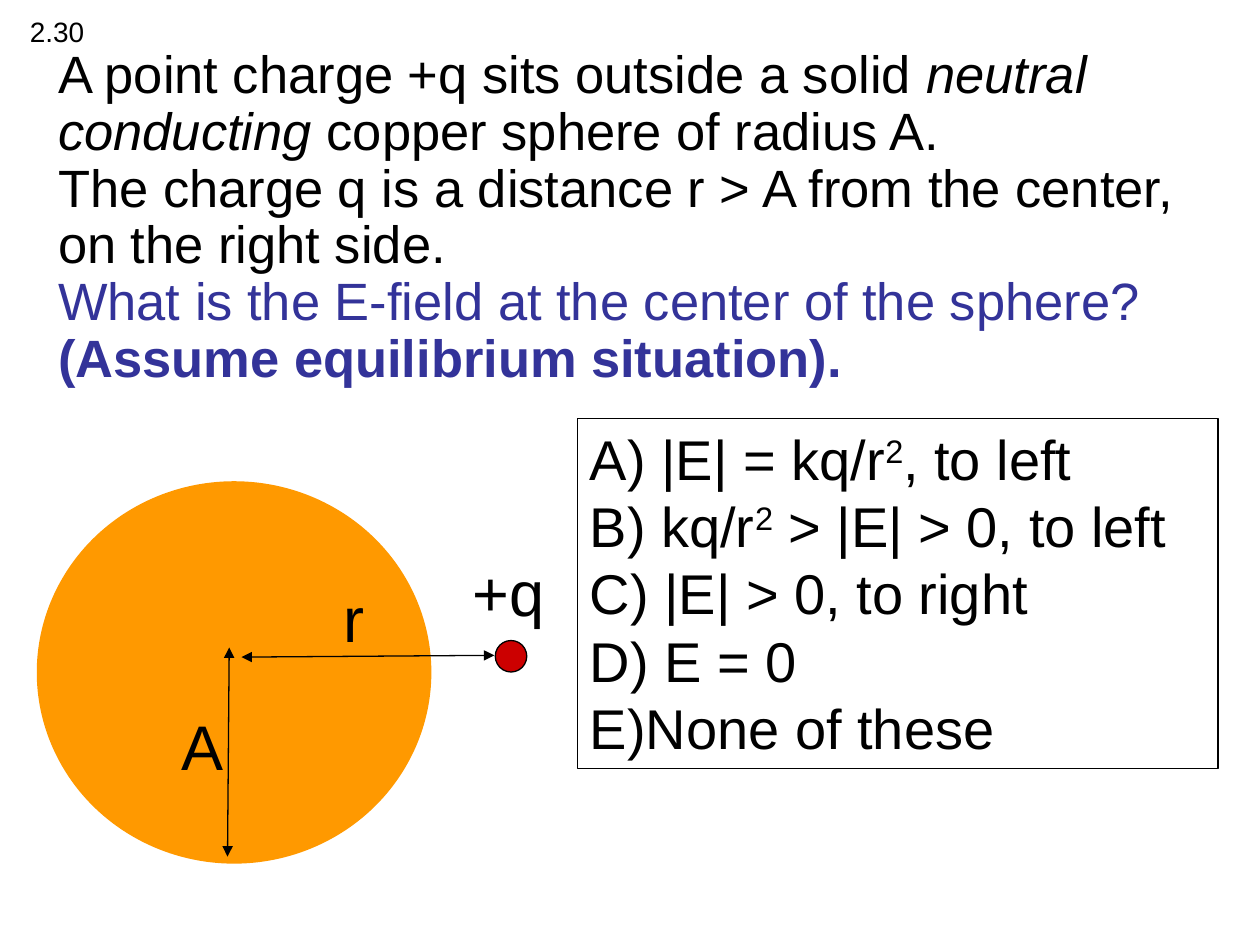
from dataclasses import dataclass

from lxml.etree import SubElement
from pptx import Presentation
from pptx.dml.color import RGBColor as Color
from pptx.enum.shapes import MSO_CONNECTOR as Connector, MSO_SHAPE as Shape
from pptx.enum.text import MSO_ANCHOR as Anchor, MSO_AUTO_SIZE as AutoSize, PP_ALIGN as Align
from pptx.oxml.ns import qn
from pptx.util import Pt


@dataclass(frozen=True)
class Theme:
    """Fonts, colours and type sizes of the slide."""
    font: str = "Arial"
    ink: str = "000000"
    question: str = "333399"
    copper: str = "FF9900"
    charge: str = "CC0000"
    body_size: int = 30
    answer_size: int = 32
    label_size: int = 36
    number_size: int = 16
    thin: float = 0.75
    thick: float = 6


THEME = Theme()

PROBLEM = [
    [("A point charge +q sits outside a solid ", ""), ("neutral conducting ", "italic"),
     ("copper sphere of radius A. ", ""), ("", "break"),
     ("The charge q is a distance r > A from the center, on the right side.", "")],
    [("What is the E-field at the center of the sphere?", "question")],
    [("(Assume equilibrium situation).", "question bold")],
]

ANSWERS = [
    [("A) |E| = kq/r", ""), ("2", "super"), (", to left", "")],
    [("B) kq/r", ""), ("2", "super"), (" > |E| > 0, to left", "")],
    [("C) |E| > 0, to right", "")],
    [("D) E = 0", "")],
    [("E)None of these", "")],
]


class SlideBuilder:
    """Draws styled elements on one slide, with lengths in points."""

    def __init__(self, slide, theme):
        """Keep the slide and its theme."""
        self.slide = slide
        self.theme = theme

    def place(self, shape, box):
        """Move and size a shape to left, top, width, height."""
        shape.left, shape.top, shape.width, shape.height = map(Pt, box)

    def outline(self, line, color, width):
        """Set the colour and width of a line."""
        line.color.rgb = Color.from_string(color)
        line.width = Pt(width)

    def fill_text(self, text_frame, paragraphs, size, spacing=None):
        """Fill a text frame with paragraphs of (text, style) pieces."""
        for index, pieces in enumerate(paragraphs):
            paragraph = text_frame.add_paragraph() if index else text_frame.paragraphs[0]
            paragraph.alignment = Align.LEFT
            paragraph.space_before = Pt(0)
            paragraph.line_spacing = spacing
            for text, style in pieces:
                if style == "break":
                    paragraph.add_line_break()
                else:
                    self.add_piece(paragraph, text, style, size)

    def add_piece(self, paragraph, text, style, size):
        """Add one formatted run to a paragraph."""
        run = paragraph.add_run()
        run.text = text
        font = run.font
        font.name, font.size = self.theme.font, Pt(size)
        font.bold, font.italic = "bold" in style, "italic" in style
        color = self.theme.question if "question" in style else self.theme.ink
        font.color.rgb = Color.from_string(color)
        if "super" in style:
            run._r.get_or_add_rPr().set("baseline", "30000")

    def body(self, box, paragraphs):
        """Fill the body placeholder and remove the unused ones."""
        for placeholder in list(self.slide.placeholders):
            if placeholder.placeholder_format.idx != 1:
                placeholder.element.getparent().remove(placeholder.element)
        body = self.slide.placeholders[1]
        self.place(body, box)
        body.text_frame.vertical_anchor = Anchor.TOP
        body.text_frame.auto_size = AutoSize.NONE
        self.fill_text(body.text_frame, paragraphs, self.theme.body_size, 0.9)

    def shape(self, kind, box, fill, line, width):
        """Add a preset shape, unfilled when fill is None."""
        shape = self.slide.shapes.add_shape(kind, *map(Pt, box))
        shape.shadow.inherit = False
        if fill:
            shape.fill.solid()
            shape.fill.fore_color.rgb = Color.from_string(fill)
        else:
            shape.fill.background()
        self.outline(shape.line, line, width)
        return shape

    def answer_box(self, box, paragraphs):
        """Add the framed list of answers."""
        shape = self.shape(Shape.RECTANGLE, box, None, self.theme.ink, self.theme.thin)
        text_frame = shape.text_frame
        text_frame.word_wrap = True
        text_frame.auto_size = AutoSize.SHAPE_TO_FIT_TEXT
        text_frame.vertical_anchor = Anchor.TOP
        self.fill_text(text_frame, paragraphs, self.theme.answer_size)

    def label(self, text, box, size, wrap=False):
        """Add a short text label."""
        text_frame = self.slide.shapes.add_textbox(*map(Pt, box)).text_frame
        text_frame.word_wrap = wrap
        text_frame.auto_size = AutoSize.SHAPE_TO_FIT_TEXT
        self.fill_text(text_frame, [[(text, "")]], size)

    def double_arrow(self, start, end):
        """Add a straight line with an arrowhead at each end."""
        connector = self.slide.shapes.add_connector(
            Connector.STRAIGHT, *map(Pt, (*start, *end)))
        self.outline(connector.line, self.theme.ink, self.theme.thin)
        line = connector.line._get_or_add_ln()
        for tag in ("a:headEnd", "a:tailEnd"):
            SubElement(line, qn(tag)).set("type", "triangle")
        SubElement(connector._element.spPr, qn("a:effectLst"))


def main():
    """Build and save the slide."""
    presentation = Presentation()
    presentation.slide_width, presentation.slide_height = Pt(720), Pt(540)
    layout = presentation.slide_layouts.get_by_name("Section Header")
    builder = SlideBuilder(presentation.slides.add_slide(layout), THEME)

    builder.body((26, 24, 658, 150.5), PROBLEM)
    builder.shape(Shape.OVAL, (24, 278, 219.5, 212.5), THEME.copper, THEME.copper, THEME.thick)
    builder.shape(Shape.OVAL, (283, 366, 18, 18), THEME.charge, THEME.ink, THEME.thin)
    builder.label("+q", (263, 312.5, 55.5, 50.5), THEME.label_size)
    builder.double_arrow((138, 375.5), (282.5, 374.5))
    builder.label("r", (189, 327.5, 24, 50.5), THEME.label_size, wrap=True)
    builder.answer_box((330, 239, 366, 200), ANSWERS)
    builder.double_arrow((131, 370), (130, 489.5))
    builder.label("A", (96.5, 400.5, 38, 50.5), THEME.label_size)
    builder.label("2.30", (10, 5, 45.5, 26.5), THEME.number_size)

    presentation.save("out.pptx")


if __name__ == "__main__":
    main()
